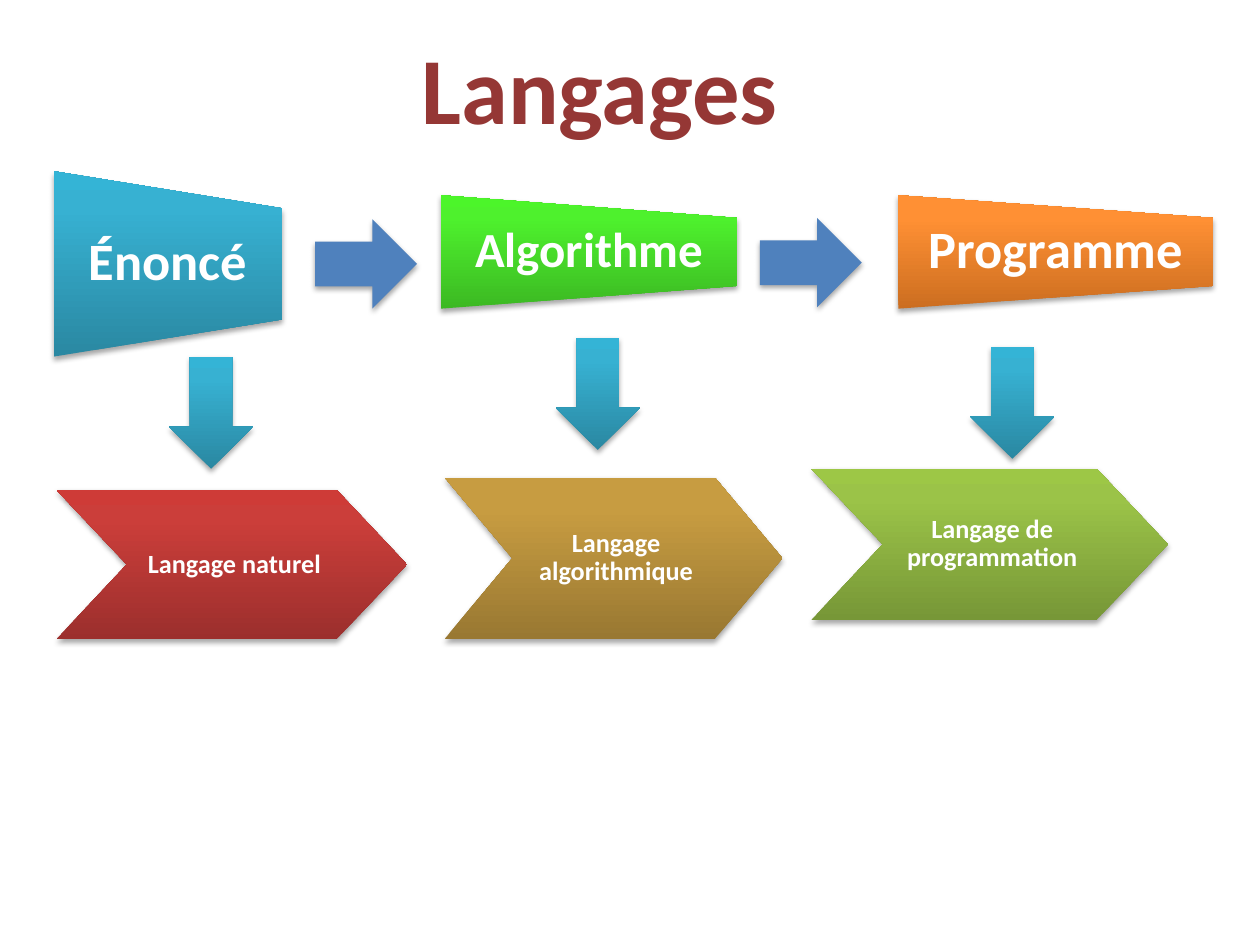
"""Build the « Langages » slide: three stages and the language each one uses."""
from typing import NamedTuple

import lxml.etree
import pptx
import pptx.dml.color
import pptx.enum.shapes
import pptx.enum.text
import pptx.oxml
import pptx.oxml.ns
import pptx.util

COLUMNS, ROWS = 100, 75
CELL = pptx.util.Inches(0.1)
FONT = "Calibri"
WHITE, TITLE_RED, ARROW_BLUE = "FFFFFF", "953735", "4F81BD"
TRAPEZOID = ((0, 1), (0, 0), (1, 0.2), (1, 0.8))
CHEVRON = ((0, 0), (0.8, 0), (1, 0.5), (0.8, 1), (0, 1), (0.2, 0.5))
NAMESPACE = 'xmlns:a="http://schemas.openxmlformats.org/drawingml/2006/main"'


class Box(NamedTuple):
    """Place and size in grid columns and rows."""
    column: float
    row: float
    width: float
    height: float

    def emu(self) -> tuple[int, ...]:
        """Return left, top, width and height in EMU."""
        return tuple(round(cells * CELL) for cells in self)


class Shade(NamedTuple):
    """Gradient colours from bottom to top."""
    bottom: str
    upper: str
    top: str


class Block(NamedTuple):
    """A labelled outline of the diagram."""
    label: str
    box: Box
    shade: Shade
    size: float


TEAL = Shade("2A88A2", "37B1D2", "34B4D6")
STAGES = (
    Block("Énoncé", Box(4.3, 13.6, 18.1, 14.7), TEAL, 30),
    Block("Algorithme", Box(35, 15.5, 23.5, 9), Shade("3CB923", "4EF12D", "4CF52A"), 28),
    Block("Programme", Box(71.3, 15.5, 25, 9), Shade("CC6E20", "FF9034", "FF9136"), 30),
)
LANGUAGES = (
    Block("Langage naturel", Box(4.5, 38.9, 27.8, 11.8), Shade("9C2F2D", "CB3E3A", "CE3B37"), 15),
    Block("Langage algorithmique", Box(35.3, 37.9, 26.8, 12.8), Shade("997832", "C79C41", "CA9D3F"), 15),
    Block("Langage de programmation", Box(64.4, 37.2, 28.3, 12), Shade("779737", "9BC348", "9DC746"), 15),
)
NEXT_STAGE_ARROWS = ((25, 17.4), (60.3, 17.3))
LANGUAGE_ARROWS = ((13.4, 28.3), (44.1, 26.8), (77, 27.5))


def colour(hex_code: str) -> pptx.dml.color.RGBColor:
    """Turn a hex string into a colour."""
    return pptx.dml.color.RGBColor.from_string(hex_code)


def write(frame, text: str, *, size: float, color: str, spacing: float = 1.0,
          insets: tuple[float, float] = (0.1, 0.1)) -> None:
    """Write bold centred text in the middle of a frame."""
    frame.word_wrap = True
    frame.auto_size = pptx.enum.text.MSO_AUTO_SIZE.NONE
    frame.vertical_anchor = pptx.enum.text.MSO_ANCHOR.MIDDLE
    frame.margin_left, frame.margin_right = map(pptx.util.Inches, insets)
    frame.margin_top = frame.margin_bottom = 0
    paragraph = frame.paragraphs[0]
    paragraph.alignment = pptx.enum.text.PP_ALIGN.CENTER
    paragraph.line_spacing = spacing
    run = paragraph.add_run()
    run.text = text
    run.font.name, run.font.size, run.font.bold = FONT, pptx.util.Pt(size), True
    run.font.color.rgb = colour(color)


def finish(shape, fill: str | Shade) -> None:
    """Give a shape its fill, a soft shadow below and no outline."""
    shape.fill.solid()
    shape.fill.fore_color.rgb = colour(fill if isinstance(fill, str) else fill.bottom)
    shape.line.fill.background()
    shape.shadow.inherit = False
    properties = shape.element.spPr
    if isinstance(fill, Shade):
        stops = "".join(f'<a:gs pos="{share * 1000}"><a:srgbClr val="{code}"/></a:gs>'
                        for share, code in zip((0, 80, 100), fill))
        gradient = pptx.oxml.parse_xml(
            f'<a:gradFill {NAMESPACE} rotWithShape="1"><a:gsLst>{stops}</a:gsLst>'
            '<a:lin ang="16200000" scaled="0"/></a:gradFill>')
        properties.replace(properties.find(pptx.oxml.ns.qn("a:solidFill")), gradient)
    effects = properties.find(pptx.oxml.ns.qn("a:effectLst"))
    effects.append(pptx.oxml.parse_xml(
        f'<a:outerShdw {NAMESPACE} blurRad="{pptx.util.Pt(3.1)}" dist="{pptx.util.Pt(1.8)}" '
        'dir="5400000" rotWithShape="0"><a:srgbClr val="000000"><a:alpha val="35000"/>'
        '</a:srgbClr></a:outerShdw>'))


def draw_block(shapes, block: Block, outline: tuple, insets: tuple[float, float]) -> None:
    """Draw a labelled block whose outline is given in shares of its box."""
    left, top, width, height = block.box.emu()
    points = [(round(left + x * width), round(top + y * height)) for x, y in outline]
    builder = shapes.build_freeform(*points[0], scale=1.0)
    builder.add_line_segments(points[1:], close=True)
    shape = builder.convert_to_shape()
    finish(shape, block.shade)
    write(shape.text_frame, block.label, size=block.size, color=WHITE, spacing=0.9, insets=insets)


def draw_arrow(shapes, kind, box: Box, fill: str | Shade) -> None:
    """Draw a block arrow."""
    finish(shapes.add_shape(kind, *box.emu()), fill)


def main() -> None:
    """Build and save the slide."""
    deck = pptx.Presentation()
    deck.slide_width, deck.slide_height = COLUMNS * CELL, ROWS * CELL
    shapes = deck.slides.add_slide(deck.slide_layouts[5]).shapes
    title = shapes.title
    title.left, title.top, title.width, title.height = Box(5, 3, 85.2, 7.7).emu()
    write(title.text_frame, "Langages", size=54, color=TITLE_RED)
    kinds = pptx.enum.shapes.MSO_SHAPE
    for stage in STAGES:
        draw_block(shapes, stage, TRAPEZOID, (0.21, 0.21))
    for column, row in NEXT_STAGE_ARROWS:
        draw_arrow(shapes, kinds.RIGHT_ARROW, Box(column, row, 8.1, 7.1), ARROW_BLUE)
    for language in LANGUAGES:
        draw_block(shapes, language, CHEVRON, (0.54, 0.5))
    for column, row in LANGUAGE_ARROWS:
        draw_arrow(shapes, kinds.DOWN_ARROW, Box(column, row, 6.7, 8.9), TEAL)
    deck.save("out.pptx")


if __name__ == "__main__":
    main()
